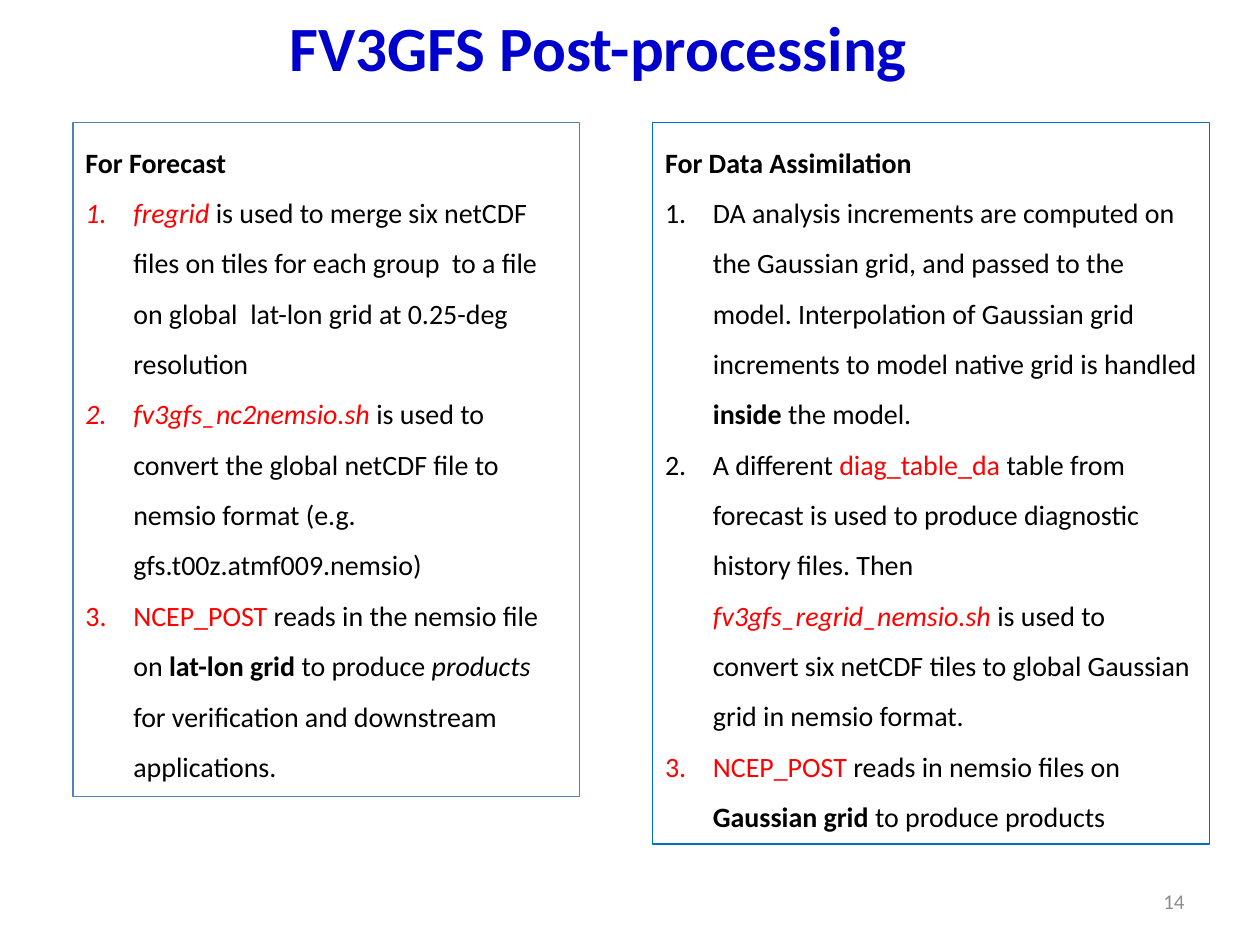
from lxml.etree import SubElement
from pptx import Presentation
from pptx.dml.color import RGBColor
from pptx.enum.shapes import MSO_SHAPE
from pptx.enum.text import MSO_ANCHOR, PP_ALIGN
from pptx.oxml.ns import qn
from pptx.util import Inches, Pt

BLACK = RGBColor(0, 0, 0)
RED = RGBColor(0xFF, 0, 0)
NAVY = RGBColor(0, 0, 0xCC)
GRAY = RGBColor(0x8C, 0x8C, 0x8C)
STEEL = RGBColor(0x4F, 0x81, 0xBD)
BLUE = RGBColor(0, 0x70, 0xC0)
FONT = "Calibri"

# Content: each run is (text, style), with r = red, b = bold, i = italic
TITLE = "FV3GFS Post-processing"
PAGE = "14"
FORECAST = [
    [("fregrid ", "ri"),
     ("is used to merge six netCDF files on tiles for each group  to a file "
      "on global  lat-lon grid at 0.25-deg resolution", "")],
    [("fv3gfs_nc2nemsio.sh ", "ri"),
     ("is used to convert the global netCDF file to nemsio format "
      "(e.g.  gfs.t00z.atmf009.nemsio)", "")],
    [("NCEP_POST", "r"), (" reads in the nemsio file on ", ""),
     ("lat-lon grid", "b"), (" to produce ", ""), ("products", "i"),
     (" for verification and downstream applications.", "")],
]
ASSIM = [
    [("DA analysis increments are computed on the Gaussian grid, and passed "
      "to the model. Interpolation of Gaussian grid increments to model "
      "native grid is handled ", ""),
     ("inside", "b"), (" the model.", "")],
    [("A different ", ""), ("diag_table_da ", "r"),
     ("table from forecast is used to produce diagnostic history files. "
      "Then ", ""),
     ("fv3gfs_regrid_nemsio.sh", "ri"),
     (" is used to convert six netCDF tiles to global Gaussian grid in "
      "nemsio format.", "")],
    [("NCEP_POST", "r"), (" reads in nemsio files on ", ""),
     ("Gaussian grid", "b"), (" to produce products", "")],
]
# Panels: heading, steps, left, width, height, line colour
PANELS = [
    ("For Forecast", FORECAST, 0.58, 4.02, 5.35, STEEL),
    ("For Data Assimilation", ASSIM, 5.18, 4.42, 5.73, BLUE),
]
TOP = 0.97
INDENT = Inches(0.38)


def style(run, size, color, bold=False, italic=False):
    font = run.font
    font.name, font.size = FONT, Pt(size)
    font.bold, font.italic = bold, italic
    font.color.rgb = color


def add_line(slide, text, box, align, size, color, bold=False):
    frame = slide.shapes.add_textbox(*map(Inches, box)).text_frame
    frame.word_wrap = True
    frame.vertical_anchor = MSO_ANCHOR.MIDDLE
    frame.text = text
    para = frame.paragraphs[0]
    para.alignment = align
    style(para.runs[0], size, color, bold)


def fill_para(para, runs):
    para.alignment = PP_ALIGN.LEFT
    para.line_spacing = 1.5
    for text, marks in runs:
        run = para.add_run()
        run.text = text
        style(run, 16, RED if "r" in marks else BLACK,
              "b" in marks, "i" in marks)


def number(para):
    props = para._p.get_or_add_pPr()
    props.set("marL", str(INDENT))
    props.set("indent", str(-INDENT))
    SubElement(props, qn("a:buFont"), typeface="+mj-lt")
    SubElement(props, qn("a:buAutoNum"), type="arabicPeriod")


def add_panel(slide, head, steps, left, width, height, color):
    box = slide.shapes.add_shape(
        MSO_SHAPE.RECTANGLE, *map(Inches, (left, TOP, width, height)))
    box.shadow.inherit = False
    box.fill.background()
    box.line.color.rgb = color
    box.line.width = Pt(0.75)
    frame = box.text_frame
    frame.word_wrap = True
    frame.vertical_anchor = MSO_ANCHOR.TOP
    fill_para(frame.paragraphs[0], [(head, "b")])
    for runs in steps:
        para = frame.add_paragraph()
        fill_para(para, runs)
        number(para)


def main():
    deck = Presentation()
    deck.slide_width, deck.slide_height = Inches(10), Inches(7.5)
    slide = deck.slides.add_slide(deck.slide_layouts[6])

    # Title and page number
    add_line(slide, TITLE, (0.5, 0.08, 8.5, 0.58), PP_ALIGN.CENTER,
             36, NAVY, True)
    add_line(slide, PAGE, (7.17, 6.95, 2.33, 0.4), PP_ALIGN.RIGHT, 12, GRAY)

    # Two panels of numbered steps
    for panel in PANELS:
        add_panel(slide, *panel)

    deck.save("out.pptx")


if __name__ == "__main__":
    main()
